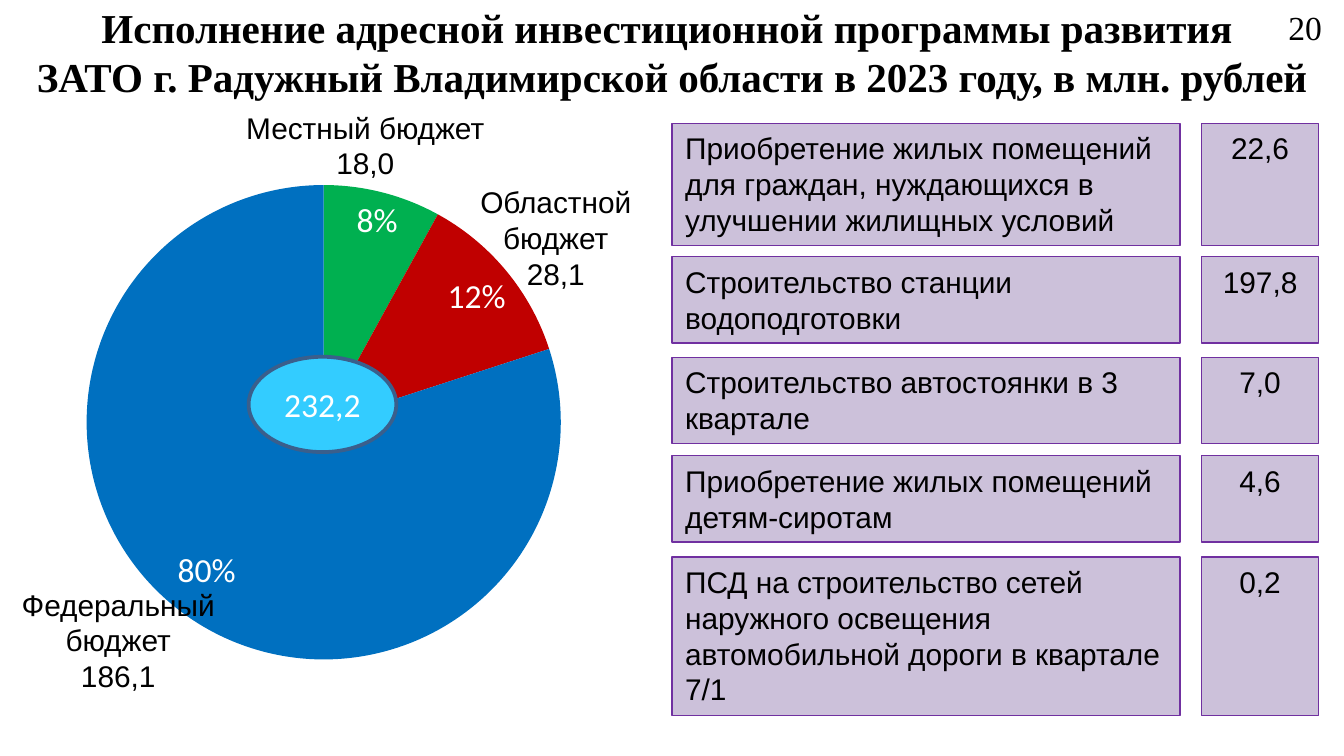
from lxml import etree
from pptx import Presentation
from pptx.chart.data import CategoryChartData
from pptx.dml.color import RGBColor
from pptx.enum.chart import XL_CHART_TYPE, XL_LABEL_POSITION
from pptx.enum.shapes import MSO_SHAPE
from pptx.enum.text import MSO_ANCHOR, MSO_AUTO_SIZE, PP_ALIGN
from pptx.oxml import parse_xml
from pptx.oxml.ns import nsdecls
from pptx.util import Cm, Pt

BLACK, WHITE = "000000", "FFFFFF"
# Category, share, colour, label shift as shares of the chart area
SECTORS = [
    ("1", 8, "00B050", (0.03, 0)),
    ("2", 12, "C00000", (0.01, 0)),
    ("3", 80, "0070C0", (-0.02, -0.03)),
]
# Text, left, top, width, height, wrapping
BUDGETS = [
    (["Федеральный бюджет", "186,1"], 0, 10.95, 4.47, 2.31, True),
    (["Областной бюджет", "28,1"], 8.51, 3.35, 3.99, 2.31, True),
    (["Местный бюджет", "18,0"], 4.29, 1.94, 5.23, 1.63, False),
]
# Project, amount, top, height
PROJECTS = [
    ("Приобретение жилых помещений для граждан, нуждающихся в улучшении жилищных условий",
     "22,6", 2.33, 2.31),
    ("Строительство станции водоподготовки", "197,8", 4.85, 1.63),
    ("Строительство автостоянки в 3 квартале", "7,0", 6.75, 1.63),
    ("Приобретение жилых помещений детям-сиротам", "4,6", 8.61, 1.63),
    ("ПСД на строительство сетей наружного освещения автомобильной дороги в квартале 7/1",
     "0,2", 10.52, 3),
]


def color(code):
    return RGBColor.from_string(code)


def set_font(font, name, size, code, bold=False):
    font.name, font.size, font.bold = name, Pt(size), bold
    font.color.rgb = color(code)


def write(shape, lines, name="Arial", size=16, code=BLACK, bold=False,
          align=PP_ALIGN.CENTER, anchor=MSO_ANCHOR.TOP, wrap=True):
    frame = shape.text_frame
    frame.word_wrap = wrap
    frame.auto_size = MSO_AUTO_SIZE.NONE
    frame.vertical_anchor = anchor
    frame.text = "\n".join(lines)
    for para in frame.paragraphs:
        para.alignment = align
        set_font(para.font, name, size, code, bold)


def add_panel(page, kind, box, fill, line, line_width):
    panel = page.shapes.add_shape(kind, *map(Cm, box))
    panel.shadow.inherit = False
    panel.fill.solid()
    panel.fill.fore_color.rgb = color(fill)
    panel.line.color.rgb = color(line)
    panel.line.width = Pt(line_width)
    return panel


def make_layout(**settings):
    layout = parse_xml(f"<c:layout {nsdecls('c')}><c:manualLayout/></c:layout>")
    for name, value in settings.items():
        etree.SubElement(layout[0], f"{{{layout.nsmap['c']}}}{name}", val=str(value))
    return layout


def add_header(page, left, top, width, height):
    title = page.shapes.title
    title.left, title.top, title.width, title.height = map(Cm, (left, top, width, height))
    write(title, ["Исполнение адресной инвестиционной программы развития \v"
                  "ЗАТО г. Радужный Владимирской области в 2023 году, в млн. рублей"],
          "Times New Roman", 22, bold=True, anchor=MSO_ANCHOR.MIDDLE)
    # Page number in the right corner
    number = page.shapes.add_textbox(Cm(left + width - 1.3), Cm(top), Cm(1.3), Cm(1.02))
    write(number, ["20"], "Times New Roman", 18, align=PP_ALIGN.LEFT)


def add_pie(page, left, top, width, height):
    data = CategoryChartData()
    data.categories = [sector[0] for sector in SECTORS]
    data.add_series("Series 1", [sector[1] for sector in SECTORS])
    chart = page.shapes.add_chart(
        XL_CHART_TYPE.PIE, *map(Cm, (left, top, width, height)), data).chart
    chart.has_legend = chart.has_title = False
    set_font(chart.font, "Calibri", 18, BLACK)
    plot = chart.plots[0]
    plot.vary_by_categories = True

    # Percent labels inside the sectors
    labels = plot.series[0].data_labels
    labels.show_percentage, labels.show_value = True, False
    labels.number_format, labels.number_format_is_linked = "0%", False
    labels.position = XL_LABEL_POSITION.INSIDE_END
    set_font(labels.font, "Calibri", 18, WHITE)

    # Sector colours and label fonts
    for index, (_, _, code, _) in enumerate(SECTORS):
        point = plot.series[0].points[index]
        point.format.fill.solid()
        point.format.fill.fore_color.rgb = color(code)
        set_font(point.data_label.font, "Calibri", 18, WHITE)
        point.data_label.position = XL_LABEL_POSITION.INSIDE_END

    # Label shifts, keeping the percents clear of the captions
    area = chart.element.chart.plotArea
    for label, (_, _, _, (x, y)) in zip(area.iter("{*}dLbl"), SECTORS):
        label.insert(1, make_layout(x=x, y=y))
        label.insert(2, parse_xml(
            f'<c:numFmt {nsdecls("c")} formatCode="0%" sourceLinked="0"/>'))
        label.find("{*}showVal").set("val", "0")
        label.find("{*}showPercent").set("val", "1")

    # Place of the pie as shares of the chart area
    for old in area.findall("{*}layout"):
        area.remove(old)
    area.insert(0, make_layout(layoutTarget="inner", xMode="edge", yMode="edge",
                               x=0.07, y=0.11, w=0.84, h=0.86))

    # Total in the middle
    total = add_panel(page, MSO_SHAPE.OVAL, (left + 3.81, top + 4.4, 2.79, 1.8),
                      "33CCFF", "3A5F8C", 2)
    write(total, ["232,2"], "Calibri", 18, WHITE, anchor=MSO_ANCHOR.MIDDLE)


def add_budget_names(page):
    for lines, left, top, width, height, wrap in BUDGETS:
        label = page.shapes.add_textbox(Cm(left), Cm(top), Cm(width), Cm(height))
        write(label, lines, wrap=wrap)


def add_projects(page, left, width, amount_width):
    amount_left = left + width - amount_width
    columns = [(left, amount_left - left - 0.41, PP_ALIGN.LEFT),
               (amount_left, amount_width, PP_ALIGN.CENTER)]
    for project, amount, top, height in PROJECTS:
        for text, (x, cell_width, align) in zip((project, amount), columns):
            panel = add_panel(page, MSO_SHAPE.RECTANGLE, (x, top, cell_width, height),
                              "CCC1DA", "7030A0", 0.75)
            write(panel, [text], align=align)


def main():
    deck = Presentation()
    deck.slide_width, deck.slide_height = Cm(25.4), Cm(14.28)
    page = deck.slides.add_slide(deck.slide_layouts[5])
    add_header(page, 0, 0, 25.4, 1.96)
    add_pie(page, 0.89, 2.34, 10.67, 10.44)
    add_budget_names(page)
    add_projects(page, 12.7, 12.22, 2.21)
    deck.save("out.pptx")


if __name__ == "__main__":
    main()
